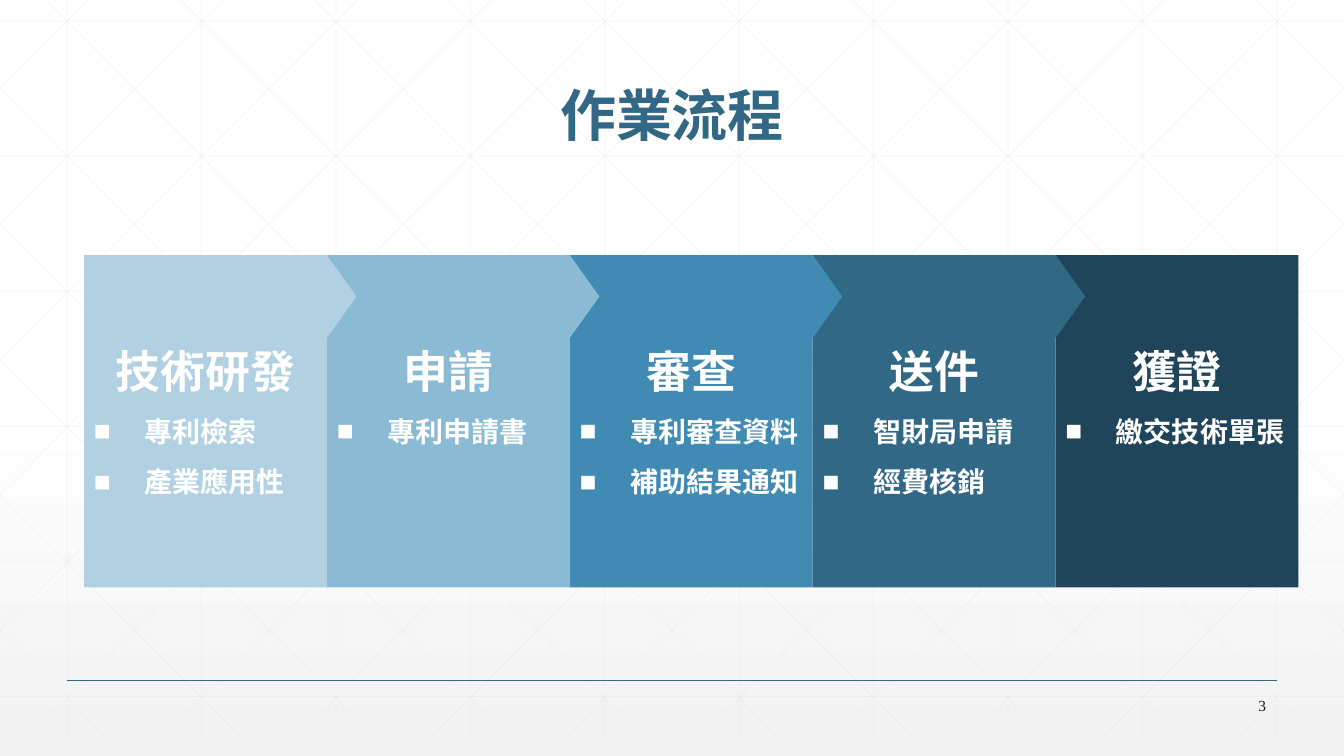
from lxml.etree import SubElement
from pptx import Presentation
from pptx.dml.color import RGBColor
from pptx.enum.shapes import MSO_CONNECTOR, MSO_SHAPE
from pptx.enum.text import MSO_ANCHOR, PP_ALIGN
from pptx.oxml.ns import qn
from pptx.util import Pt

FONT = "Times New Roman"
WHITE = RGBColor(0xFF, 0xFF, 0xFF)
PALE_GRAY = RGBColor(0xF2, 0xF2, 0xF2)
GRID_GRAY = RGBColor(0xD9, 0xD9, 0xD9)
INK = RGBColor(0x1A, 0x1A, 0x1A)
BLUE = RGBColor(0x31, 0x68, 0x86)

SLIDE_WIDTH, SLIDE_HEIGHT = 960, 540
GRID_STEP, GRID_TOP, GRID_BOTTOM = 96, -15, 525
DIAGONAL_START, DIAGONAL_RUN = 18, 536.5

PANEL_LEFT, PANEL_TOP = 60, 182.2
PANEL_WIDTH, PANEL_HEIGHT = 173.5, 237.4
ARROW_WIDTH, ARROW_HEIGHT = 42.4, 59.2
BULLET_LINE, BULLET_INDENT, INSET = 36, 36, 3.6
MOST_BULLETS = 2

STEPS = [
    ("技術研發", ["專利檢索", "產業應用性"], RGBColor(0xB1, 0xD1, 0xE3)),
    ("申請", ["專利申請書"], RGBColor(0x8A, 0xBA, 0xD4)),
    ("審查", ["專利審查資料", "補助結果通知"], RGBColor(0x41, 0x8A, 0xB3)),
    ("送件", ["智財局申請", "經費核銷"], BLUE),
    ("獲證", ["繳交技術單張"], RGBColor(0x20, 0x45, 0x5A)),
]


def write(paragraph, text, size, color, bold=False, align=PP_ALIGN.LEFT,
          spacing=1.0, bullet=None):
    """Fill a paragraph with one formatted run."""
    paragraph.alignment = align
    paragraph.line_spacing = spacing
    paragraph.space_before = paragraph.space_after = Pt(0)
    run = paragraph.add_run()
    run.text = text
    run.font.name = FONT
    run.font.size = Pt(size)
    run.font.bold = bold
    run.font.color.rgb = color
    if bullet:
        properties = paragraph._p.get_or_add_pPr()
        properties.set("marL", str(Pt(BULLET_INDENT)))
        properties.set("indent", str(-Pt(BULLET_INDENT)))
        SubElement(properties, qn("a:buFont"), typeface=FONT)
        SubElement(properties, qn("a:buChar"), char=bullet)


def add_line(slide, start, end, color, width, opacity=100):
    line = slide.shapes.add_connector(
        MSO_CONNECTOR.STRAIGHT, *(Pt(value) for value in (*start, *end)))
    line.line.color.rgb = color
    line.line.width = Pt(width)
    properties = line._element.spPr
    if opacity < 100:
        color_element = properties.find(".//" + qn("a:srgbClr"))
        SubElement(color_element, qn("a:alpha"), val=str(opacity * 1000))
    SubElement(properties, qn("a:effectLst"))


def add_block(slide, kind, left, top, width, height, color):
    block = slide.shapes.add_shape(kind, Pt(left), Pt(top), Pt(width), Pt(height))
    block.fill.solid()
    block.fill.fore_color.rgb = color
    block.line.fill.background()
    block.shadow.inherit = False
    return block


def add_background(slide):
    fill = slide.background.fill
    fill.gradient()
    fill.gradient_angle = 270
    for stop, position, color in zip(fill.gradient_stops, (0.53, 1), (WHITE, PALE_GRAY)):
        stop.position = position
        stop.color.rgb = color


def add_grid(slide):
    lines = []
    for column in range(10):
        x = GRID_STEP * (column + 0.5)
        lines.append(((x, GRID_TOP), (x, GRID_BOTTOM)))
    for row in range(6):
        y = 15 + 96.5 * row
        lines.append(((0, y), (SLIDE_WIDTH, y)))

    # Diagonals are cut at the slide's sides, then mirrored
    slope = (GRID_BOTTOM - GRID_TOP) / DIAGONAL_RUN
    for index in range(-5, 10):
        top_x = DIAGONAL_START + GRID_STEP * index
        start_x = max(top_x, 0)
        end_x = min(top_x + DIAGONAL_RUN, SLIDE_WIDTH)
        start_y, end_y = (GRID_TOP + (x - top_x) * slope for x in (start_x, end_x))
        lines.append(((start_x, start_y), (end_x, end_y)))
        lines.append(((SLIDE_WIDTH - start_x, start_y), (SLIDE_WIDTH - end_x, end_y)))

    for start, end in lines:
        add_line(slide, start, end, GRID_GRAY, 0.5, opacity=25)


def add_title(slide, text):
    title = slide.shapes.title
    title.left, title.top, title.width, title.height = Pt(102), Pt(39.6), Pt(756), Pt(90)
    title.text_frame.vertical_anchor = MSO_ANCHOR.MIDDLE
    write(title.text_frame.paragraphs[0], text, 40, BLUE, bold=True,
          align=PP_ALIGN.CENTER, spacing=0.9)
    slide.shapes._spTree.append(title._element)  # in front of the grid


def add_page_number(slide, number):
    box = slide.shapes.add_textbox(Pt(839.5), Pt(495.4), Pt(72), Pt(17.3))
    frame = box.text_frame
    frame.word_wrap = True
    frame.vertical_anchor = MSO_ANCHOR.MIDDLE
    write(frame.paragraphs[0], number, 11, INK, align=PP_ALIGN.RIGHT)


def add_step(slide, index):
    heading, bullets, color = STEPS[index]
    left = PANEL_LEFT + PANEL_WIDTH * index
    panel = add_block(slide, MSO_SHAPE.RECTANGLE, left, PANEL_TOP,
                      PANEL_WIDTH, PANEL_HEIGHT, color)
    frame = panel.text_frame
    frame.word_wrap = True
    frame.vertical_anchor = MSO_ANCHOR.MIDDLE
    # A panel with fewer bullets keeps its heading level with the others
    frame.margin_bottom = Pt(INSET + BULLET_LINE * (MOST_BULLETS - len(bullets)))
    write(frame.paragraphs[0], heading, 32, WHITE, bold=True, align=PP_ALIGN.CENTER)
    for bullet in bullets:
        write(frame.add_paragraph(), bullet, 20, WHITE, bold=True,
              spacing=1.5, bullet="■")

    # Arrow tip over the next panel
    if index < len(STEPS) - 1:
        add_block(slide, MSO_SHAPE.DIAMOND, left + PANEL_WIDTH - ARROW_WIDTH / 2,
                  PANEL_TOP, ARROW_WIDTH, ARROW_HEIGHT, color)


def main():
    presentation = Presentation()
    presentation.slide_width = Pt(SLIDE_WIDTH)
    presentation.slide_height = Pt(SLIDE_HEIGHT)
    slide = presentation.slides.add_slide(presentation.slide_layouts[5])

    # Backdrop
    add_background(slide)
    add_grid(slide)
    add_line(slide, (48, 486), (912, 486), BLUE, 1)

    # Title and page number
    add_title(slide, "作業流程")
    add_page_number(slide, "3")

    # Process steps, last one at the back
    for index in reversed(range(len(STEPS))):
        add_step(slide, index)

    presentation.save("out.pptx")


if __name__ == "__main__":
    main()
